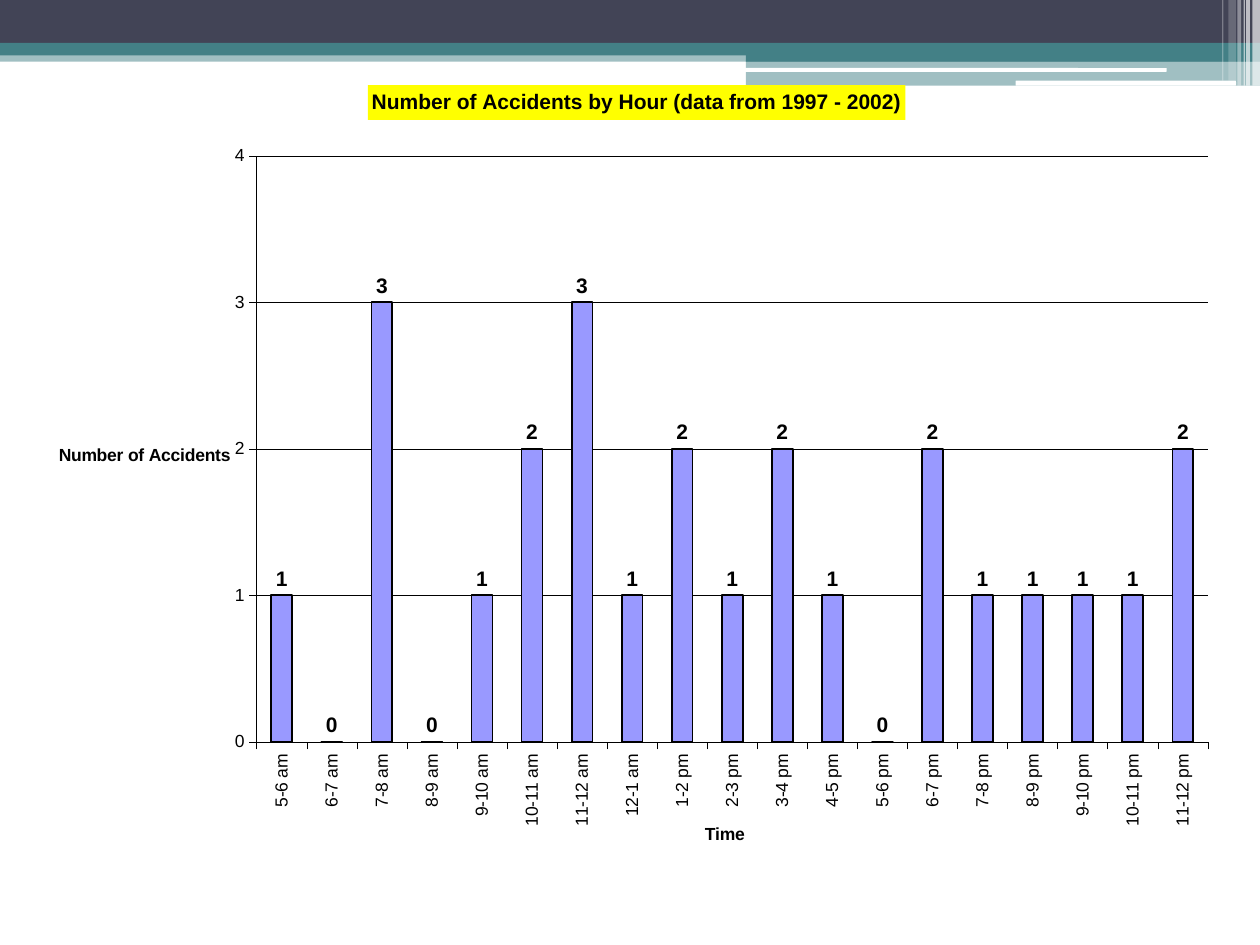
import lxml.etree
import pptx
import pptx.chart.data
import pptx.dml.color
import pptx.enum.chart
import pptx.enum.shapes
import pptx.oxml.ns
import pptx.util

Inches = pptx.util.Inches
Pt = pptx.util.Pt
qn = pptx.oxml.ns.qn

COLORS = {
    "navy": "424456",
    "teal": "438086",
    "white": "FFFFFF",
    "black": "000000",
    "yellow": "FFFF00",
    "bar": "9999FF",
}
HOURS = [
    "5-6 am", "6-7 am", "7-8 am", "8-9 am", "9-10 am", "10-11 am", "11-12 am",
    "12-1 am", "1-2 pm", "2-3 pm", "3-4 pm", "4-5 pm", "5-6 pm", "6-7 pm",
    "7-8 pm", "8-9 pm", "9-10 pm", "10-11 pm", "11-12 pm",
]
ACCIDENTS = [1, 0, 3, 0, 1, 2, 3, 1, 2, 1, 2, 1, 0, 2, 1, 1, 1, 1, 2]


def rgb(name):
    return pptx.dml.color.RGBColor.from_string(COLORS[name])


def style_font(font, size=10, bold=False, color="black", name="Arial"):
    font.size = Pt(size)
    font.bold = bold
    font.name = name
    font.color.rgb = rgb(color)


def write_text(frame, text, **style):
    para = frame.paragraphs[0]
    span = para.add_run()
    span.text = text
    style_font(span.font, **style)


def style_line(line, width):
    line.color.rgb = rgb("black")
    line.width = Pt(width)


def place(parent, index, inner=False, **lengths):
    for old in parent.findall(qn("c:layout")):
        parent.remove(old)
    layout = lxml.etree.Element(qn("c:layout"))
    manual = lxml.etree.SubElement(layout, qn("c:manualLayout"))
    settings = {"layoutTarget": "inner"} if inner else {}
    settings.update(xMode="edge", yMode="edge", **lengths)
    for tag, value in settings.items():
        lxml.etree.SubElement(manual, qn(f"c:{tag}")).set("val", str(value))
    parent.insert(index, layout)


class SlideBuilder:
    """Holds the style and the current slide, and adds elements to it."""

    def __init__(self, page):
        self.page = page
        self.shapes = pptx.enum.shapes.MSO_SHAPE

    def band(self, left, top, width, height, color, opacity=100, rounded=False):
        kind = self.shapes.ROUNDED_RECTANGLE if rounded else self.shapes.RECTANGLE
        box = self.page.shapes.add_shape(
            kind, Inches(left), Inches(top), Inches(width), Inches(height))
        box.shadow.inherit = False
        box.fill.solid()
        box.fill.fore_color.rgb = rgb(color)
        box.line.fill.background()
        if opacity < 100:
            fill = box.element.xpath("./p:spPr/a:solidFill/a:srgbClr")[0]
            alpha = lxml.etree.SubElement(fill, qn("a:alpha"))
            alpha.set("val", str(opacity * 1000))

    def axis(self, axis, title):
        style_font(axis.tick_labels.font)
        style_line(axis.format.line, 0.25)
        axis.major_tick_mark = pptx.enum.chart.XL_TICK_MARK.OUTSIDE
        axis.minor_tick_mark = pptx.enum.chart.XL_TICK_MARK.NONE
        axis.has_title = True
        write_text(axis.axis_title.text_frame, title, bold=True)

    def column_chart(self, left, top, width, height, title, cats, values):
        data = pptx.chart.data.CategoryChartData()
        data.categories = cats
        data.add_series("Series 1", values)
        chart = self.page.shapes.add_chart(
            pptx.enum.chart.XL_CHART_TYPE.COLUMN_CLUSTERED,
            Inches(left), Inches(top), Inches(width), Inches(height), data).chart
        style_font(chart.font)
        chart.has_legend = False
        chart.has_title = True
        write_text(chart.chart_title.text_frame, title, size=12, bold=True)
        chart.chart_title.format.fill.solid()
        chart.chart_title.format.fill.fore_color.rgb = rgb("yellow")

        hours, counts = chart.category_axis, chart.value_axis
        self.axis(hours, "Time")
        self.axis(counts, "Number of Accidents")
        hours.has_major_gridlines = False
        hours.tick_label_position = pptx.enum.chart.XL_TICK_LABEL_POSITION.LOW
        counts.minimum_scale, counts.maximum_scale, counts.major_unit = 0, 4, 1
        counts.has_major_gridlines = True
        style_line(counts.major_gridlines.format.line, 0.25)

        plot = chart.plots[0]
        plot.gap_width = 140
        plot.vary_by_categories = False
        series = plot.series[0]
        series.format.fill.solid()
        series.format.fill.fore_color.rgb = rgb("bar")
        style_line(series.format.line, 1)
        labels = series.data_labels
        labels.show_value = True
        labels.position = pptx.enum.chart.XL_LABEL_POSITION.OUTSIDE_END
        style_font(labels.font, size=12, bold=True)

        root = chart.element
        for route, angle in (("c:catAx/c:txPr", -5400000), ("c:valAx/c:title", 0)):
            root.xpath(f".//{route}//a:bodyPr")[0].set("rot", str(angle))
        place(root.xpath(".//c:plotArea")[0], 0, inner=True,
              x=0.184, y=0.106, w=0.804, h=0.728)
        for route, x, y in (("c:chart", 0.278, 0.018),
                            ("c:catAx", 0.56, 0.93),
                            ("c:valAx", 0.014, 0.46)):
            place(root.xpath(f".//{route}/c:title")[0], 1, x=x, y=y)


def main():
    deck = pptx.Presentation()
    deck.slide_width, deck.slide_height = Inches(10), Inches(7.5)
    builder = SlideBuilder(deck.slides.add_slide(deck.slide_layouts[6]))

    builder.band(0, 0.4, 10, 0.09, "teal", 50)
    builder.band(0, 0, 10, 0.34, "navy")
    builder.band(0, 0.34, 10, 0.1, "teal")
    builder.band(5.92, 0.39, 4.08, 0.1, "teal")
    builder.band(5.92, 0.48, 4.08, 0.2, "teal", 50)
    builder.band(5.91, 0.54, 3.35, 0.03, "white", rounded=True)
    builder.band(8.06, 0.64, 1.75, 0.04, "white", rounded=True)
    for left, width, height, opacity in (
            (9.94, 0.06, 0.68, 65), (9.89, 0.03, 0.68, 65),
            (9.87, 0.01, 0.68, 60), (9.82, 0.03, 0.68, 40),
            (9.75, 0.06, 0.64, 20), (9.7, 0.01, 0.64, 30)):
        builder.band(left, 0, width, height, "white", opacity)

    builder.column_chart(
        0.31, 0.56, 9.39, 6.39,
        "Number of Accidents by Hour (data from 1997 - 2002)", HOURS, ACCIDENTS)
    deck.save("out.pptx")


if __name__ == "__main__":
    main()
